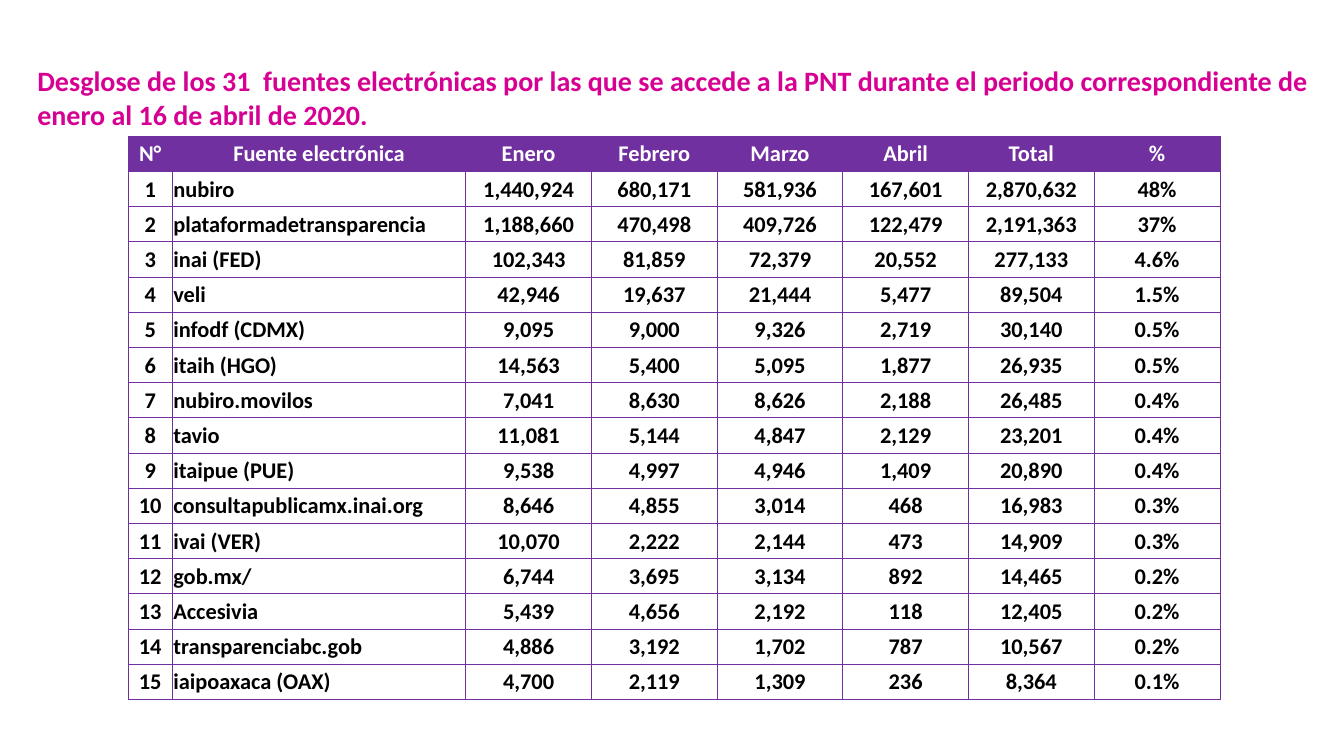
from lxml import etree
from pptx import Presentation
from pptx import util as u
from pptx.dml.color import RGBColor
from pptx.enum import text
from pptx.oxml import ns

PX = 9144
FONT = "Calibri"
PURPLE, PINK, WHITE, BLACK = "7030A0", "D60093", "FFFFFF", "000000"
TITLE = (
    "Desglose de los 31  fuentes electrónicas por las que se accede a la PNT "
    "durante el periodo correspondiente de enero al 16 de abril de 2020."
)
HEAD = ["N°", "Fuente electrónica", "Enero", "Febrero", "Marzo", "Abril", "Total", "%"]
ROWS = [
    ("nubiro", "1,440,924", "680,171", "581,936", "167,601", "2,870,632", "48%"),
    ("plataformadetransparencia", "1,188,660", "470,498", "409,726", "122,479", "2,191,363", "37%"),
    ("inai (FED)", "102,343", "81,859", "72,379", "20,552", "277,133", "4.6%"),
    ("veli", "42,946", "19,637", "21,444", "5,477", "89,504", "1.5%"),
    ("infodf (CDMX)", "9,095", "9,000", "9,326", "2,719", "30,140", "0.5%"),
    ("itaih (HGO)", "14,563", "5,400", "5,095", "1,877", "26,935", "0.5%"),
    ("nubiro.movilos", "7,041", "8,630", "8,626", "2,188", "26,485", "0.4%"),
    ("tavio", "11,081", "5,144", "4,847", "2,129", "23,201", "0.4%"),
    ("itaipue (PUE)", "9,538", "4,997", "4,946", "1,409", "20,890", "0.4%"),
    ("consultapublicamx.inai.org", "8,646", "4,855", "3,014", "468", "16,983", "0.3%"),
    ("ivai (VER)", "10,070", "2,222", "2,144", "473", "14,909", "0.3%"),
    ("gob.mx/", "6,744", "3,695", "3,134", "892", "14,465", "0.2%"),
    ("Accesivia", "5,439", "4,656", "2,192", "118", "12,405", "0.2%"),
    ("transparenciabc.gob", "4,886", "3,192", "1,702", "787", "10,567", "0.2%"),
    ("iaipoaxaca (OAX)", "4,700", "2,119", "1,309", "236", "8,364", "0.1%"),
]


def px(n):
    return u.Emu(round(n * PX))


def rgb(code):
    return RGBColor.from_string(code)


def style(para, size, color, align):
    para.alignment = align
    font = para.font
    font.name, font.size, font.bold = FONT, u.Pt(size), True
    font.color.rgb = rgb(color)


def add_title(slide):
    shape = slide.shapes.title
    shape.left, shape.top, shape.width, shape.height = map(px, (27, 58, 1282, 77))
    frame = shape.text_frame
    frame.text = TITLE
    frame.word_wrap = True
    frame.auto_size = text.MSO_AUTO_SIZE.NONE
    frame.vertical_anchor = text.MSO_ANCHOR.TOP
    style(frame.paragraphs[0], 20, PINK, text.PP_ALIGN.LEFT)


def add_border(cell, color):
    props = cell._tc.get_or_add_tcPr()
    for i, side in enumerate(("lnL", "lnR", "lnT", "lnB")):
        line = etree.Element(ns.qn(f"a:{side}"), w=str(u.Pt(0.5)))
        fill = etree.SubElement(line, ns.qn("a:solidFill"))
        etree.SubElement(fill, ns.qn("a:srgbClr"), val=color)
        props.insert(i, line)


def fill_cell(cell, value, ink, back, align):
    cell.text = value
    cell.margin_left = cell.margin_top = cell.margin_right = px(1)
    cell.margin_bottom = 0
    cell.vertical_anchor = text.MSO_ANCHOR.MIDDLE
    cell.fill.solid()
    cell.fill.fore_color.rgb = rgb(back)
    style(cell.text_frame.paragraphs[0], 16, ink, align)
    add_border(cell, PURPLE)


def add_grid(slide):
    data = [HEAD] + [(str(n), *row) for n, row in enumerate(ROWS, 1)]
    wide, high = 1083, 559
    first = [44, 291]
    rest = len(HEAD) - len(first)
    widths = first + [(wide - sum(first)) / rest] * rest
    table = slide.shapes.add_table(
        len(data), len(HEAD), px(127), px(135), px(wide), px(high)
    ).table
    for col, width in zip(table.columns, widths):
        col.width = px(width)
    for r, row in enumerate(data):
        table.rows[r].height = px(high / len(data))
        ink, back = (BLACK, WHITE) if r else (WHITE, PURPLE)
        for c, value in enumerate(row):
            left = r and c == 1
            align = text.PP_ALIGN.LEFT if left else text.PP_ALIGN.CENTER
            fill_cell(table.cell(r, c), value, ink, back, align)


def main():
    deck = Presentation()
    deck.slide_width, deck.slide_height = px(1333), px(750)
    slide = deck.slides.add_slide(deck.slide_layouts[5])
    add_title(slide)
    add_grid(slide)
    deck.save("out.pptx")


if __name__ == "__main__":
    main()
